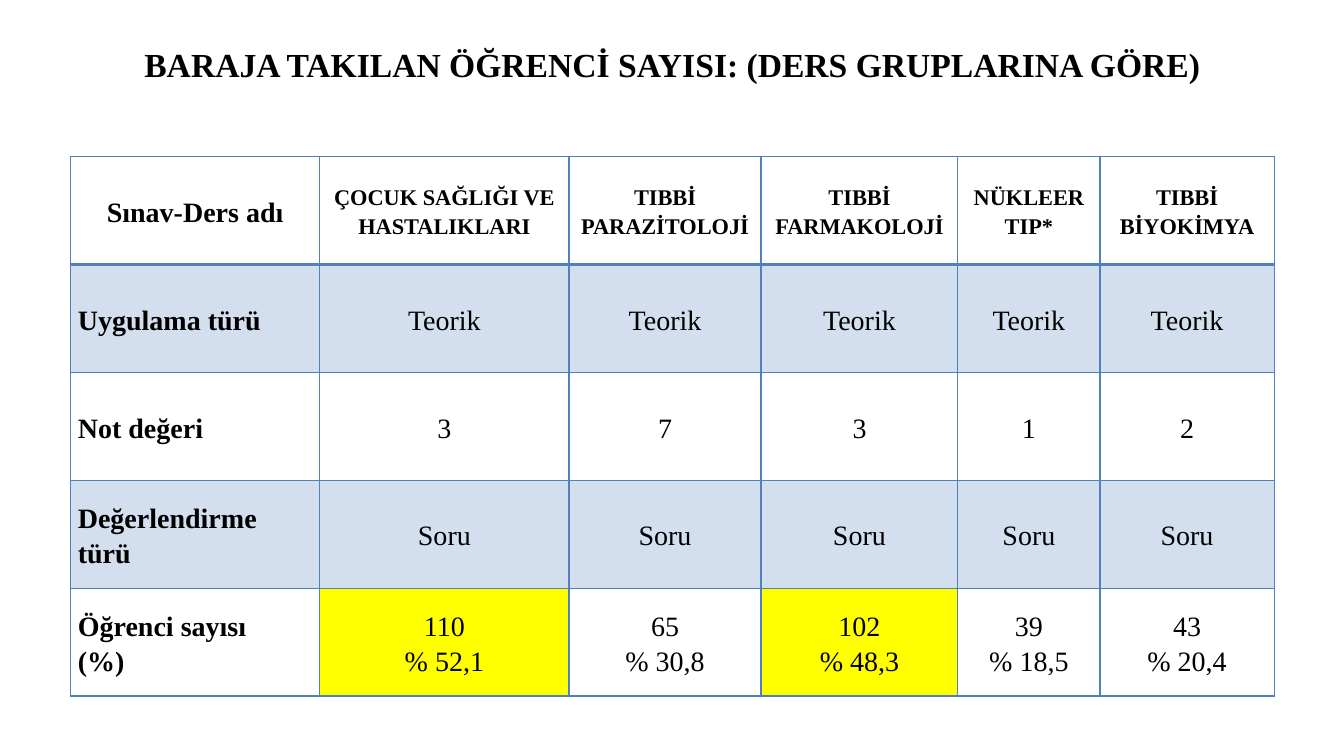
import dataclasses

import lxml.etree
import pptx
import pptx.dml.color
import pptx.enum.text
import pptx.oxml.ns
import pptx.util

Cm = pptx.util.Cm
Pt = pptx.util.Pt
ALIGN = pptx.enum.text.PP_ALIGN
MIDDLE = pptx.enum.text.MSO_ANCHOR.MIDDLE


@dataclasses.dataclass(frozen=True)
class Theme:
    """Colours, font and type sizes of the slide."""
    font: str = "Times New Roman"
    ink: str = "000000"
    border: str = "4F81BD"
    band: str = "D3DFEE"
    highlight: str = "FFFF00"
    title_size: int = 24
    body_size: int = 20
    course_size: int = 16
    thin: float = 1
    thick: float = 2.25


class SlideBuilder:
    """Draws styled elements on one slide."""

    def __init__(self, slide, theme):
        self.slide = slide
        self.theme = theme

    def set_text(self, frame, text, size, bold, align, spacing):
        """Fill a text frame and format its paragraphs."""
        frame.text = text
        frame.word_wrap = True
        for paragraph in frame.paragraphs:
            paragraph.alignment = align
            paragraph.line_spacing = spacing
            for run in paragraph.runs:
                run.font.name = self.theme.font
                run.font.size = Pt(size)
                run.font.bold = bold
                run.font.color.rgb = pptx.dml.color.RGBColor.from_string(self.theme.ink)

    def title(self, text, left, top, width, height):
        """Add the centred heading."""
        heading = self.slide.shapes.add_textbox(Cm(left), Cm(top), Cm(width), Cm(height))
        heading.text_frame.vertical_anchor = MIDDLE
        self.set_text(heading.text_frame, text, self.theme.title_size, True, ALIGN.CENTER, 0.9)

    def borders(self, cell, top, bottom):
        """Outline a cell, with its own top and bottom weights."""
        properties = cell._tc.get_or_add_tcPr()
        qn = pptx.oxml.ns.qn
        weights = {"L": self.theme.thin, "R": self.theme.thin, "T": top, "B": bottom}
        for side, weight in weights.items():
            line = lxml.etree.SubElement(properties, qn(f"a:ln{side}"), w=str(Pt(weight)))
            fill = lxml.etree.SubElement(line, qn("a:solidFill"))
            lxml.etree.SubElement(fill, qn("a:srgbClr"), val=self.theme.border)

    def cell(self, cell, text, row, column, highlighted):
        """Style one table cell according to its place."""
        theme = self.theme
        header, label = row == 0, column == 0
        cell.vertical_anchor = MIDDLE
        cell.margin_left = cell.margin_right = Cm(0.18)
        cell.margin_top = cell.margin_bottom = 0
        size = theme.course_size if header and not label else theme.body_size
        align = ALIGN.LEFT if label and not header else ALIGN.CENTER
        self.set_text(cell.text_frame, text, size, header or label, align, 1.15)
        self.borders(cell, theme.thick if row == 1 else theme.thin,
                     theme.thick if header else theme.thin)
        colour = theme.highlight if highlighted else theme.band if row % 2 else None
        if colour:
            cell.fill.solid()
            cell.fill.fore_color.rgb = pptx.dml.color.RGBColor.from_string(colour)
        else:
            cell.fill.background()

    def table(self, rows, left, top, widths, row_height, highlights):
        """Add the table with banded rows and highlighted cells."""
        grid = self.slide.shapes.add_table(
            len(rows), len(widths), Cm(left), Cm(top),
            Cm(sum(widths)), Cm(row_height * len(rows))).table
        for column, width in enumerate(widths):
            grid.columns[column].width = Cm(width)
        for row, texts in enumerate(rows):
            grid.rows[row].height = Cm(row_height)
            for column, text in enumerate(texts):
                self.cell(grid.cell(row, column), text, row, column,
                          (row, column) in highlights)


def main():
    """Build and save the slide."""
    deck = pptx.Presentation()
    deck.slide_width, deck.slide_height = Cm(33.87), Cm(19.05)
    builder = SlideBuilder(deck.slides.add_slide(deck.slide_layouts[6]), Theme())
    builder.title("BARAJA TAKILAN ÖĞRENCİ SAYISI: (DERS GRUPLARINA GÖRE)",
                  2.34, 1.02, 29.21, 1.3)
    courses = ["ÇOCUK SAĞLIĞI VE HASTALIKLARI", "TIBBİ PARAZİTOLOJİ",
               "TIBBİ FARMAKOLOJİ", "NÜKLEER TIP*", "TIBBİ BİYOKİMYA"]
    results = [
        ["Sınav-Ders adı", *courses],
        ["Uygulama türü"] + ["Teorik"] * len(courses),
        ["Not değeri", "3", "7", "3", "1", "2"],
        ["Değerlendirme türü"] + ["Soru"] * len(courses),
        ["Öğrenci sayısı\n(%)", "110\n% 52,1", "65\n% 30,8", "102\n% 48,3",
         "39\n% 18,5", "43\n% 20,4"],
    ]
    builder.table(results, 1.78, 3.94, [6.28, 6.28, 4.84, 4.96, 3.58, 4.39], 2.72,
                  {(4, 1), (4, 3)})
    deck.save("out.pptx")


if __name__ == "__main__":
    main()
